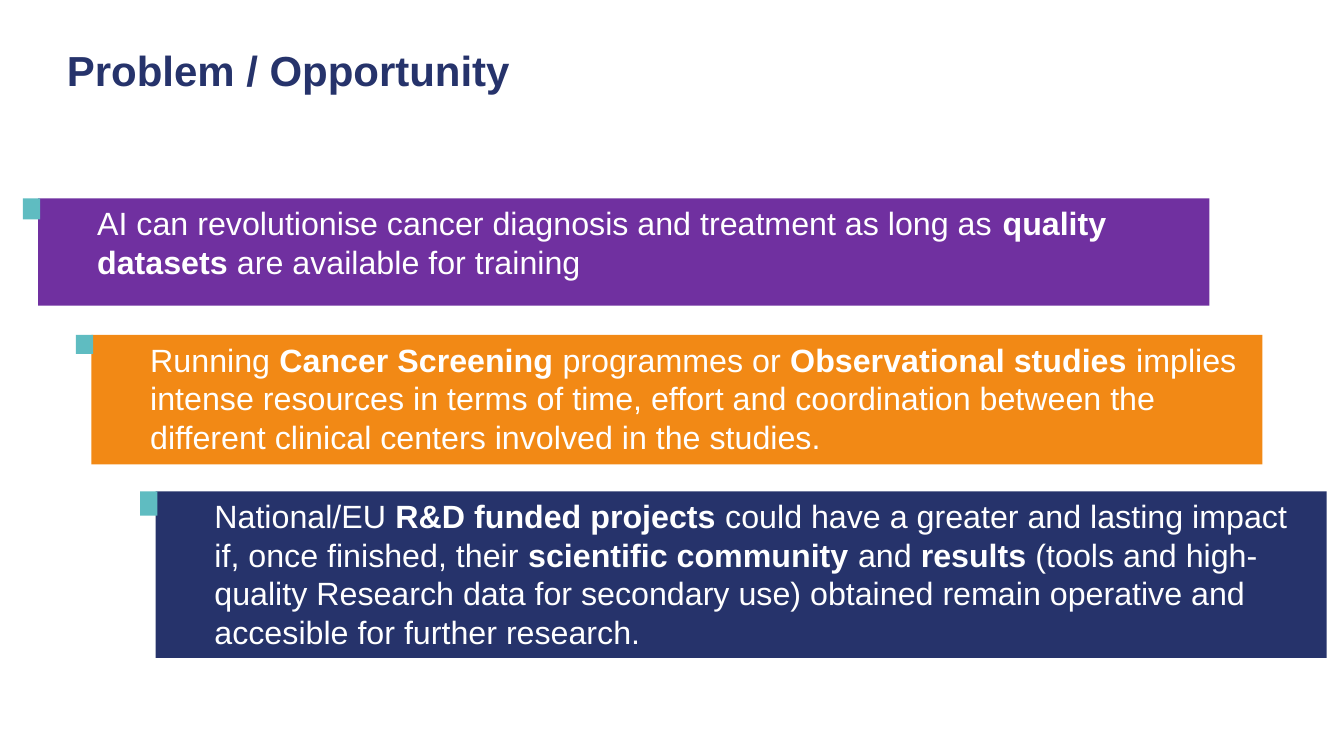
"""Build the Problem / Opportunity slide with three staggered statement bars."""
from pptx import Presentation
from pptx.dml.color import RGBColor
from pptx.enum.shapes import MSO_SHAPE
from pptx.enum.text import MSO_ANCHOR, MSO_AUTO_SIZE, PP_ALIGN
from pptx.util import Pt

COLORS = {
    "navy": "26336B",
    "purple": "7030A0",
    "orange": "F28915",
    "teal": "5FBCC1",
    "white": "FFFFFF",
}
FONT_NAME = "Arial"
BAR_WIDTH = 836.6
MARKER_WIDTH = 12.4
MARKER_OFFSET = -11
TEXT_OFFSET = 35


def add_block(shapes, left, top, width, height, color):
    block = shapes.add_shape(MSO_SHAPE.RECTANGLE, Pt(left), Pt(top), Pt(width), Pt(height))
    block.shadow.inherit = False
    block.fill.solid()
    block.fill.fore_color.rgb = RGBColor.from_string(COLORS[color])
    block.line.fill.background()


def format_run(run, size, color, bold):
    run.font.name = FONT_NAME
    run.font.size = Pt(size)
    run.font.bold = bold
    run.font.color.rgb = RGBColor.from_string(COLORS[color])


presentation = Presentation()
presentation.slide_width = Pt(960)
presentation.slide_height = Pt(540)
slide = presentation.slides.add_slide(presentation.slide_layouts[5])

title = slide.shapes.title
title.left, title.top, title.width, title.height = Pt(40.6), Pt(0), Pt(662.4), Pt(104.4)
title_frame = title.text_frame
title_frame.text = "Problem / Opportunity"
title_frame.auto_size = MSO_AUTO_SIZE.NONE
title_frame.vertical_anchor = MSO_ANCHOR.MIDDLE
title_paragraph = title_frame.paragraphs[0]
title_paragraph.alignment = PP_ALIGN.LEFT
title_paragraph.line_spacing = 0.9
format_run(title_paragraph.runs[0], 30, "navy", True)

statements = [
    (27.3, 141.7, 76.6, 15.1, 814.3, "purple", [
        ("AI can revolutionise cancer diagnosis and treatment as long as ", False),
        ("quality datasets", True),
        (" are available for training", False),
    ]),
    (65.2, 239.2, 92.6, 13.6, 814.3, "orange", [
        ("Running ", False),
        ("Cancer Screening", True),
        (" programmes or ", False),
        ("Observational studies", True),
        (" implies intense resources in terms of time, effort and coordination "
         "between the different clinical centers involved in the studies.", False),
    ]),
    (111.1, 351, 119, 17.3, 794.9, "navy", [
        ("National/EU ", False),
        ("R&D funded projects ", True),
        ("could have a greater and lasting impact if, once finished, their ", False),
        ("scientific community ", True),
        ("and ", False),
        ("results", True),
        (" (tools and high-quality Research data for secondary use) obtained "
         "remain operative and accesible for further research.", False),
    ]),
]

for left, top, height, marker_height, text_width, color, parts in statements:
    shapes = slide.shapes.add_group_shape().shapes
    add_block(shapes, left, top, BAR_WIDTH, height, color)
    add_block(shapes, left + MARKER_OFFSET, top, MARKER_WIDTH, marker_height, "teal")
    textbox = shapes.add_textbox(Pt(left + TEXT_OFFSET), Pt(top), Pt(text_width), Pt(height))
    textbox.text_frame.word_wrap = True
    paragraph = textbox.text_frame.paragraphs[0]
    for text, bold in parts:
        run = paragraph.add_run()
        run.text = text
        format_run(run, 23, "white", bold)

presentation.save("out.pptx")
